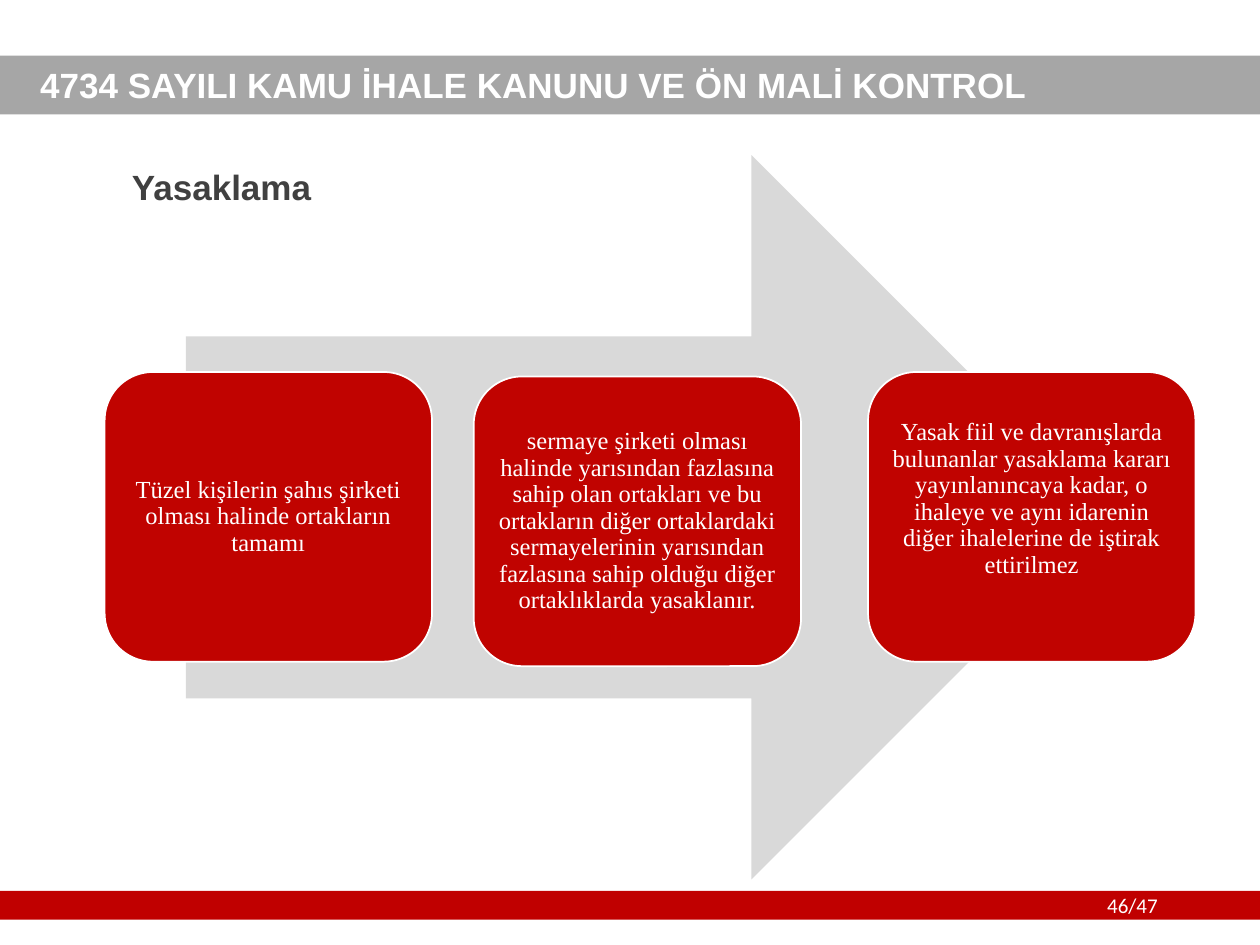
from dataclasses import dataclass, field

from pptx import Presentation
from pptx import util as u
from pptx.dml import color
from pptx.enum import shapes, text

KIND = shapes.MSO_SHAPE
MID = text.MSO_ANCHOR.MIDDLE
MAIN = {"size": u.Pt(20), "name": "Arial", "bold": True}
BODY = {"size": u.Pt(14), "name": "Times New Roman"}
PAGE = {"size": u.Pt(12), "name": "Calibri"}
TIGHT = {"line_spacing": 0.9}
MIDST = {**TIGHT, "alignment": text.PP_ALIGN.CENTER}


@dataclass
class Box:
    left: float
    top: float
    width: float
    height: float

    def span(self) -> list:
        return [u.Cm(n) for n in (self.left, self.top, self.width, self.height)]


@dataclass
class Label:
    words: str
    tint: str
    font: dict
    para: dict = field(default_factory=dict)
    frame: dict = field(default_factory=dict)


@dataclass
class Card:
    left: float
    top: float
    words: str
    foot: float = 0.15


CARDS = [
    Card(2.11, 7.5, "Tüzel kişilerin şahıs şirketi olması halinde ortakların tamamı"),
    Card(9.55, 7.59, "sermaye şirketi olması halinde yarısından fazlasına sahip olan "
         "ortakları ve bu ortakların diğer ortaklardaki sermayelerinin yarısından "
         "fazlasına sahip olduğu diğer ortaklıklarda yasaklanır."),
    Card(17.5, 7.5, "Yasak fiil ve davranışlarda bulunanlar yasaklama kararı "
         "yayınlanıncaya kadar, o ihaleye ve aynı idarenin diğer ihalelerine de "
         "iştirak ettirilmez", 0.87),
]


def rgb(code: str) -> color.RGBColor:
    return color.RGBColor.from_string(code)


def apply(target, values: dict) -> None:
    for name, value in values.items():
        setattr(target, name, value)


def write(shape, label: Label) -> None:
    frame = shape.text_frame
    apply(frame, {"word_wrap": True, **label.frame})
    para = frame.paragraphs[0]
    apply(para, label.para)
    run = para.add_run()
    run.text = label.words
    apply(run.font, label.font)
    run.font.color.rgb = rgb(label.tint)


def block(slide, kind, box: Box, fill: str, edge: str = ""):
    shape = slide.shapes.add_shape(kind, *box.span())
    shape.shadow.inherit = False
    shape.fill.solid()
    shape.fill.fore_color.rgb = rgb(fill)
    if edge:
        shape.line.color.rgb = rgb(edge)
        shape.line.width = u.Pt(1)
    else:
        shape.line.fill.background()
    return shape


def note(slide, box: Box, label: Label) -> None:
    write(slide.shapes.add_textbox(*box.span()), label)


def panel(slide, card: Card) -> None:
    shape = block(slide, KIND.ROUNDED_RECTANGLE,
                  Box(card.left, card.top, 6.6, 5.84), "C00300", "FFFFFF")
    pad = {f"margin_{side}": u.Cm(0.15) for side in ("left", "right", "top")}
    pad.update(margin_bottom=u.Cm(card.foot), vertical_anchor=MID)
    write(shape, Label(card.words, "FFFFFF", BODY, MIDST, pad))


def main() -> None:
    """Build the procurement ban slide and save it."""
    deck = Presentation()
    apply(deck, {"slide_width": u.Cm(25.4), "slide_height": u.Cm(19.05)})
    slide = deck.slides.add_slide(deck.slide_layouts[6])

    block(slide, KIND.RECTANGLE, Box(0, 17.96, 25.4, 0.58), "C00000")
    block(slide, KIND.RECTANGLE, Box(0, 1.12, 25.4, 1.19), "A6A6A6")
    note(slide, Box(0.56, 1.17, 22.99, 1.19),
         Label("4734 SAYILI KAMU İHALE KANUNU VE ÖN MALİ KONTROL", "FFFFFF",
               MAIN, TIGHT, {"vertical_anchor": MID}))
    note(slide, Box(22.07, 17.86, 2.36, 0.76), Label("46/47", "FFFFFF", PAGE))
    note(slide, Box(2.41, 3.3, 22.99, 1.19),
         Label("Yasaklama", "404040", MAIN, TIGHT))
    block(slide, KIND.RIGHT_ARROW, Box(3.75, 3.13, 18.7, 14.6), "D9D9D9")
    for card in CARDS:
        panel(slide, card)

    deck.save("out.pptx")


if __name__ == "__main__":
    main()
